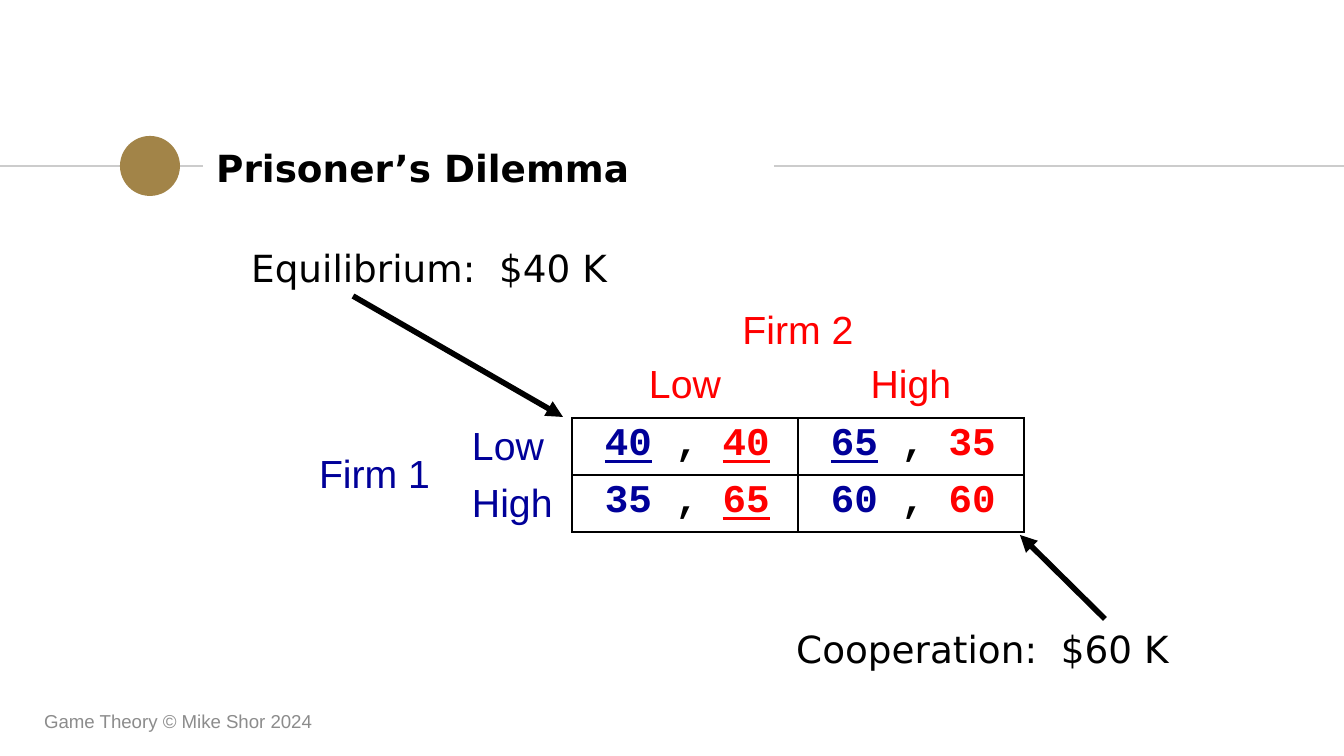
from lxml.etree import SubElement
from pptx import Presentation
from pptx.dml.color import RGBColor
from pptx.enum.shapes import MSO_CONNECTOR, MSO_SHAPE
from pptx.enum.text import MSO_ANCHOR, PP_ALIGN
from pptx.oxml.ns import qn
from pptx.util import Emu, Pt

PX = 914400 / 134.4  # EMU in one px
BLACK = RGBColor(0x00, 0x00, 0x00)
GRAY = RGBColor(0x8C, 0x8C, 0x8C)
RULE_GRAY = RGBColor(0xCC, 0xCC, 0xCC)
GOLD = RGBColor(0xA2, 0x84, 0x48)
RED = RGBColor(0xFF, 0x00, 0x00)
BLUE = RGBColor(0x00, 0x00, 0x99)

deck = Presentation()
deck.slide_width, deck.slide_height = Emu(round(1344 * PX)), Emu(round(756 * PX))
page = deck.slides.add_slide(deck.slide_layouts[6])


def add_line(start, end, color, width, arrow=False):
    ends = [Emu(round(value * PX)) for value in start + end]
    line = page.shapes.add_connector(MSO_CONNECTOR.STRAIGHT, *ends)
    line.line.color.rgb = color
    line.line.width = Pt(width)
    if arrow:
        SubElement(line.line._get_or_add_ln(), qn("a:tailEnd"), type="triangle")
    SubElement(line._element.spPr, qn("a:effectLst"))


def add_text(text, place, font_name, size, color, bold=False, anchor=MSO_ANCHOR.TOP):
    box = page.shapes.add_textbox(*[Emu(round(value * PX)) for value in place])
    frame = box.text_frame
    frame.word_wrap = True
    frame.vertical_anchor = anchor
    para = frame.paragraphs[0]
    para.text = text
    para.font.name, para.font.size = font_name, Pt(size)
    para.font.bold = bold
    para.font.color.rgb = color


# Title band: rule, gold dot, title
add_line((0, 166), (203, 166), RULE_GRAY, 0.75)
dot = page.shapes.add_shape(
    MSO_SHAPE.OVAL, *[Emu(round(value * PX)) for value in (120, 136, 60, 60)])
dot.shadow.inherit = False
dot.fill.solid()
dot.fill.fore_color.rgb = GOLD
dot.line.fill.background()
add_line((774, 166), (1344, 166), RULE_GRAY, 0.75)
add_text("Prisoner’s Dilemma", (203, 136, 570, 64), "DejaVu Sans", 20, BLACK,
         bold=True, anchor=MSO_ANCHOR.MIDDLE)

# Footer
add_text("Game Theory © Mike Shor 2024", (31, 701, 454, 40), "Arial", 10, GRAY,
         anchor=MSO_ANCHOR.MIDDLE)

# Payoff table
columns, rows = [25, 128, 109, 226, 226], [57, 60, 57, 57]
place = (310, 301, sum(columns), sum(rows))
table = page.shapes.add_table(
    len(rows), len(columns), *[Emu(round(value * PX)) for value in place]).table
table.first_row = table.horz_banding = False
for column, width in zip(table.columns, columns):
    column.width = Emu(round(width * PX))
for row, height in zip(table.rows, rows):
    row.height = Emu(round(height * PX))
for first, last in [((0, 0), (0, 2)), ((0, 3), (0, 4)), ((1, 1), (1, 2)), ((2, 0), (3, 1))]:
    table.cell(*first).merge(table.cell(*last))

# Player and strategy labels
labels = {
    (0, 3): ("Firm 2", RED, PP_ALIGN.CENTER, MSO_ANCHOR.BOTTOM),
    (1, 3): ("Low", RED, PP_ALIGN.CENTER, MSO_ANCHOR.TOP),
    (1, 4): ("High", RED, PP_ALIGN.CENTER, MSO_ANCHOR.TOP),
    (2, 0): ("Firm 1", BLUE, PP_ALIGN.LEFT, MSO_ANCHOR.MIDDLE),
    (2, 2): ("Low", BLUE, PP_ALIGN.LEFT, MSO_ANCHOR.MIDDLE),
    (3, 2): ("High", BLUE, PP_ALIGN.LEFT, MSO_ANCHOR.MIDDLE),
}
# Each payoff with whether it is a best response (underlined)
payoffs = {
    (2, 3): (("40", True), ("40", True)),
    (2, 4): (("65", True), ("35", False)),
    (3, 3): (("35", False), ("65", True)),
    (3, 4): (("60", False), ("60", False)),
}

for row in range(len(rows)):
    for column in range(len(columns)):
        cell = table.cell(row, column)
        position = (row, column)
        borders = []
        cell.margin_left = cell.margin_right = Emu(round(9 * PX))
        cell.margin_top = cell.margin_bottom = Emu(round(5 * PX))
        para = cell.text_frame.paragraphs[0]
        para.font.name, para.font.size = "Arial", Pt(21)
        if position in labels:
            para.text, para.font.color.rgb, para.alignment, cell.vertical_anchor = labels[position]
            borders = {(1, 3): ["B"], (1, 4): ["B"], (2, 2): ["R"], (3, 2): ["R"]}.get(position, [])
        elif position in payoffs:
            (own, own_best), (rival, rival_best) = payoffs[position]
            cell.margin_left = Emu(round(33 * PX))
            para.font.name, para.font.bold = "Courier New", True
            for text, color, best in [(own, BLUE, own_best), (" , ", BLACK, False),
                                      (rival, RED, rival_best)]:
                span = para.add_run()
                span.text = text
                span.font.color.rgb = color
                span.font.underline = best
            borders = ["L", "R", "T", "B"]
        properties = cell._tc.get_or_add_tcPr()
        for side in ["L", "R", "T", "B"]:
            drawn = side in borders
            edge = SubElement(properties, qn(f"a:ln{side}"), w=str(Pt(1) if drawn else 0))
            if drawn:
                fill = SubElement(edge, qn("a:solidFill"))
                SubElement(fill, qn("a:srgbClr"), val=str(BLACK))
            else:
                SubElement(edge, qn("a:noFill"))
        cell.fill.background()

# Callouts with arrows to the table corners
add_line((353, 296), (563, 417), BLACK, 3, arrow=True)
add_text("Equilibrium:  $40 K", (238, 239, 407, 59), "DejaVu Sans", 20, BLACK)
add_text("Cooperation:  $60 K", (783, 620, 407, 59), "DejaVu Sans", 20, BLACK)
add_line((1105, 619), (1020, 535), BLACK, 3, arrow=True)

deck.save("out.pptx")
